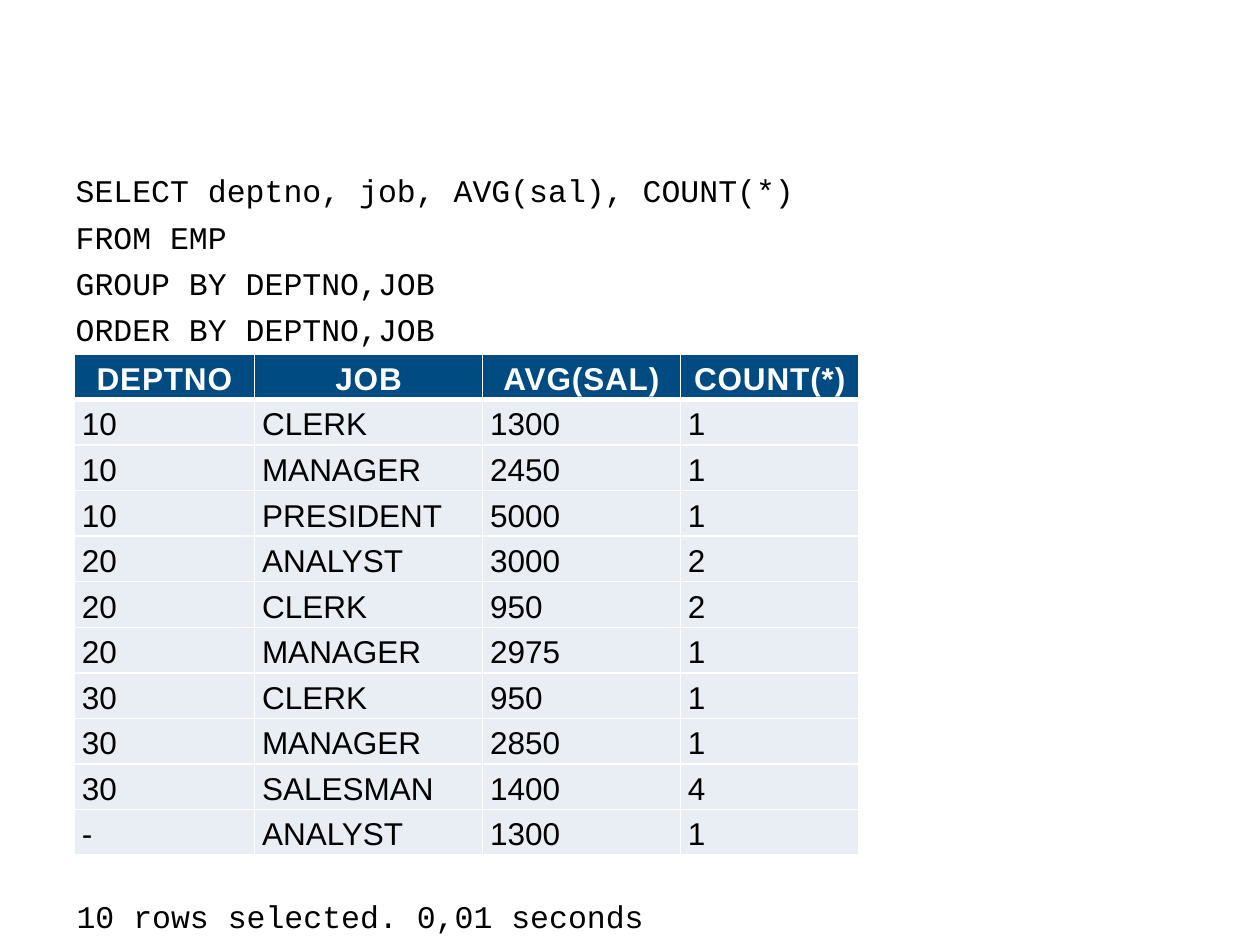
from lxml import etree
from pptx import Presentation
from pptx.dml.color import RGBColor
from pptx.enum.text import MSO_ANCHOR, MSO_AUTO_SIZE, PP_ALIGN
from pptx.oxml.ns import qn
from pptx.util import Inches, Pt

CENTER, LEFT = PP_ALIGN.CENTER, PP_ALIGN.LEFT
TOP, MIDDLE, BOTTOM = MSO_ANCHOR.TOP, MSO_ANCHOR.MIDDLE, MSO_ANCHOR.BOTTOM
NO_AUTOFIT = MSO_AUTO_SIZE.NONE

CODE_FONT, TABLE_FONT = "Courier New", "Arial"
BLACK, WHITE, HEADER_BLUE, ROW_GREY = "000000", "FFFFFF", "004B82", "E9EDF4"

QUERY = [
    "SELECT deptno, job, AVG(sal), COUNT(*)",
    "FROM EMP",
    "GROUP BY DEPTNO,JOB",
    "ORDER BY DEPTNO,JOB",
]
RESULT = [
    ("DEPTNO", "JOB", "AVG(SAL)", "COUNT(*)"),
    ("10", "CLERK", "1300", "1"),
    ("10", "MANAGER", "2450", "1"),
    ("10", "PRESIDENT", "5000", "1"),
    ("20", "ANALYST", "3000", "2"),
    ("20", "CLERK", "950", "2"),
    ("20", "MANAGER", "2975", "1"),
    ("30", "CLERK", "950", "1"),
    ("30", "MANAGER", "2850", "1"),
    ("30", "SALESMAN", "1400", "4"),
    ("-", "ANALYST", "1300", "1"),
]
COLUMN_WIDTHS = [1.43, 1.81, 1.57, 1.42]
ROW_HEIGHT = 0.36


def color(hex_string):
    return RGBColor.from_string(hex_string)


def add_run(paragraph, text, font_name, hex_color=BLACK, bold=False):
    run = paragraph.add_run()
    run.text = text
    run.font.name = font_name
    run.font.size = Pt(18)
    run.font.bold = bold
    run.font.color.rgb = color(hex_color)
    return run


def fill_query(body, left, top, width, height):
    """Place the body placeholder and write the query without bullets."""
    body.left, body.top = Inches(left), Inches(top)
    body.width, body.height = Inches(width), Inches(height)
    frame = body.text_frame
    frame.auto_size = NO_AUTOFIT
    frame.vertical_anchor = TOP
    for index, line in enumerate(QUERY):
        paragraph = frame.add_paragraph() if index else frame.paragraphs[0]
        paragraph.space_before = Pt(4.8)
        properties = paragraph._p.get_or_add_pPr()
        properties.set("marL", "0")
        properties.set("indent", "0")
        etree.SubElement(properties, qn("a:buNone"))
        add_run(paragraph, line, CODE_FONT)


def set_borders(cell, top_points, bottom_points):
    properties = cell._tc.get_or_add_tcPr()
    for side, points in (("L", 1), ("R", 1), ("T", top_points), ("B", bottom_points)):
        line = etree.SubElement(properties, qn(f"a:ln{side}"), w=str(Pt(points)))
        solid = etree.SubElement(line, qn("a:solidFill"))
        etree.SubElement(solid, qn("a:srgbClr"), val=WHITE)


def fill_cell(cell, text, row):
    is_header = row == 0
    set_borders(cell, 3 if row == 1 else 1, 3 if is_header else 1)
    cell.fill.solid()
    cell.fill.fore_color.rgb = color(HEADER_BLUE if is_header else ROW_GREY)
    cell.vertical_anchor = BOTTOM if is_header else MIDDLE
    cell.margin_left = cell.margin_right = Inches(0.06)
    cell.margin_top = cell.margin_bottom = Inches(0.02)
    paragraph = cell.text_frame.paragraphs[0]
    paragraph.alignment = CENTER if is_header else LEFT
    paragraph.line_spacing = 1.15
    run = add_run(paragraph, text, TABLE_FONT, WHITE if is_header else BLACK, is_header)
    if is_header:
        run.font._element.set("spc", "50")


def add_result_table(slide, left, top):
    table = slide.shapes.add_table(
        len(RESULT), len(COLUMN_WIDTHS), Inches(left), Inches(top),
        Inches(sum(COLUMN_WIDTHS)), Inches(ROW_HEIGHT * len(RESULT))).table
    table.horz_banding = False
    for column, width in zip(table.columns, COLUMN_WIDTHS):
        column.width = Inches(width)
    for row, values in enumerate(RESULT):
        table.rows[row].height = Inches(ROW_HEIGHT)
        for column, value in enumerate(values):
            fill_cell(table.cell(row, column), value, row)


def add_status(slide, left, top, width, height):
    box = slide.shapes.add_textbox(
        Inches(left), Inches(top), Inches(width), Inches(height))
    box.text_frame.word_wrap = True
    add_run(box.text_frame.paragraphs[0], "10 rows selected. 0,01 seconds", CODE_FONT)


def main():
    presentation = Presentation()
    presentation.slide_width, presentation.slide_height = Inches(10), Inches(7.5)
    title_and_content = presentation.slide_layouts[1]
    slide = presentation.slides.add_slide(title_and_content)
    title = slide.shapes.title._element
    title.getparent().remove(title)
    fill_query(slide.placeholders[1], 0.5, 1.31, 9, 1.34)
    add_result_table(slide, 0.59, 2.81)
    add_status(slide, 0.51, 7.07, 5, 0.4)
    presentation.save("out.pptx")


if __name__ == "__main__":
    main()
